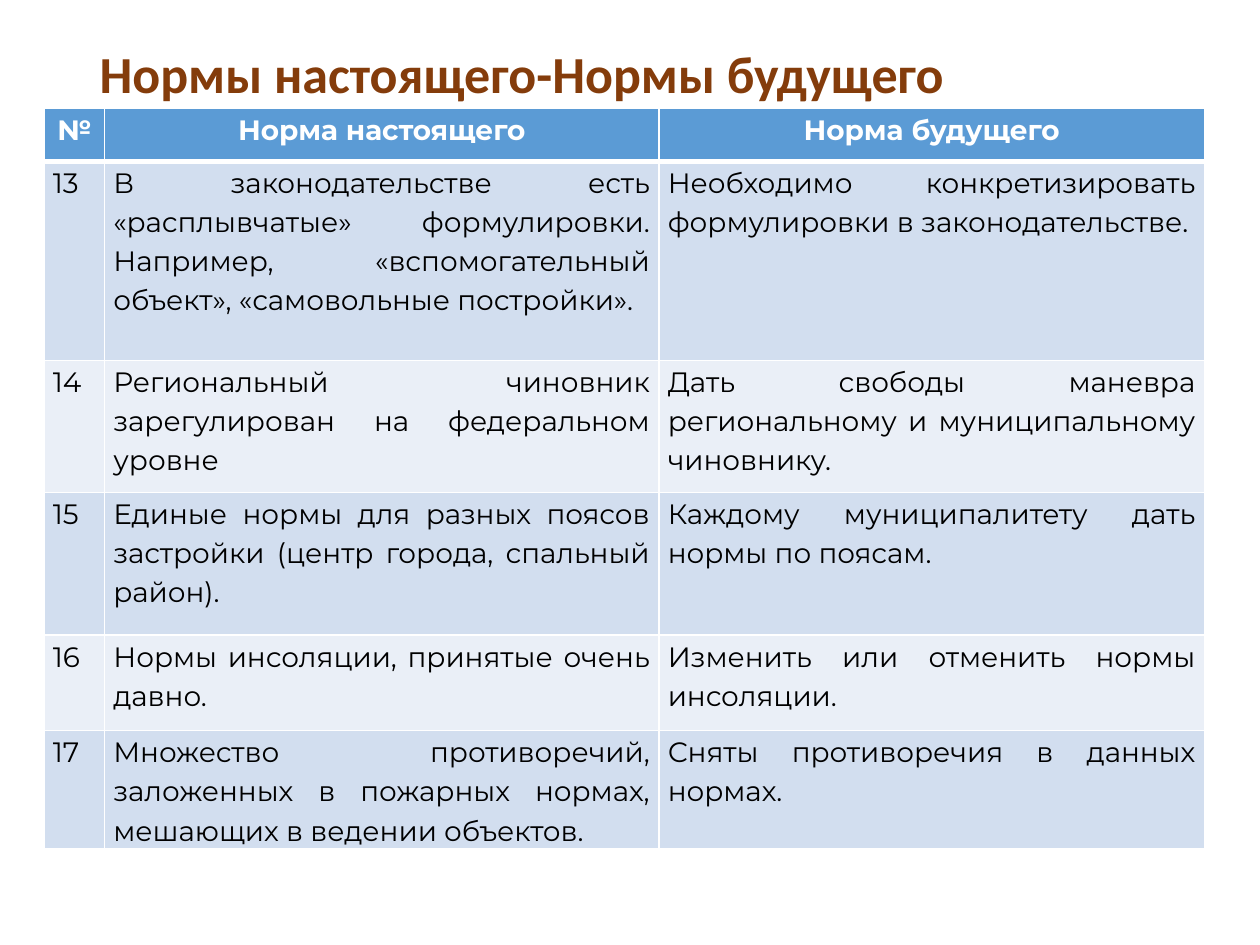
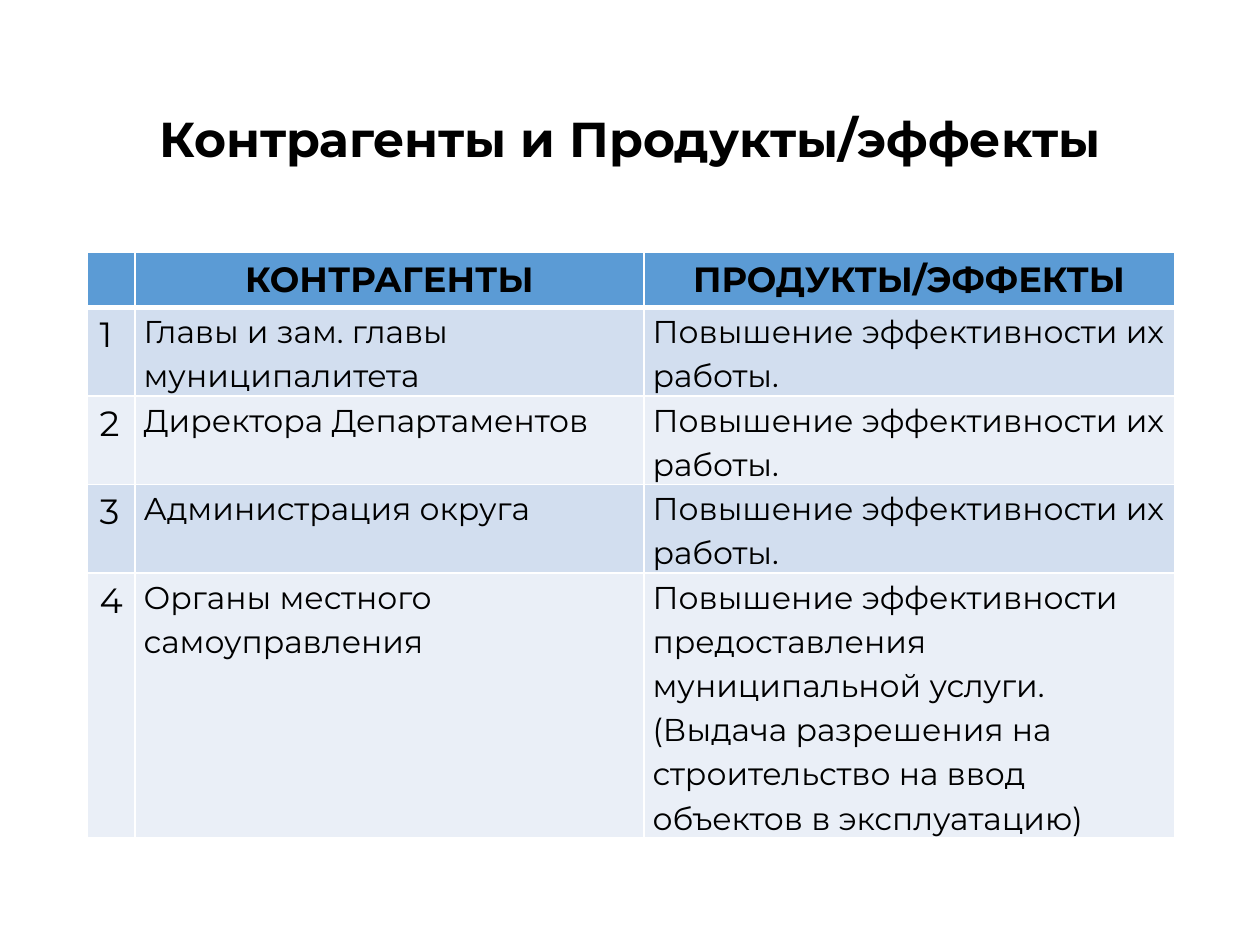
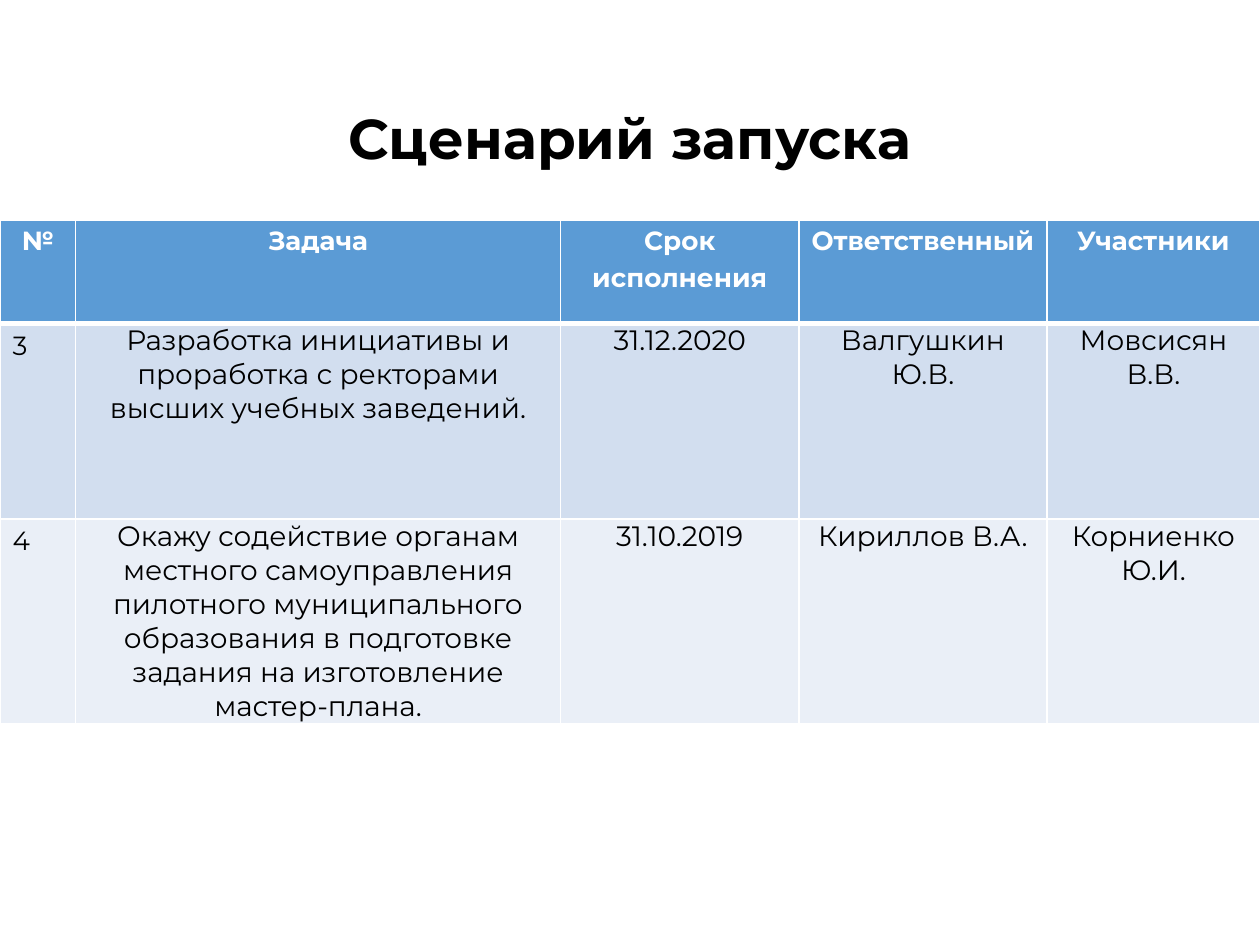
from dataclasses import dataclass
from lxml.etree import SubElement
from pptx import Presentation
from pptx.dml.color import RGBColor
from pptx.enum.text import MSO_ANCHOR, MSO_AUTO_SIZE, PP_ALIGN
from pptx.oxml.ns import qn
from pptx.util import Inches, Pt

LEFT, MID, JUST = PP_ALIGN.LEFT, PP_ALIGN.CENTER, PP_ALIGN.JUSTIFY


@dataclass(frozen=True)
class Theme:
    font: str = "Montserrat"
    black: str = "000000"
    white: str = "FFFFFF"
    brown: str = "843C0B"
    head: str = "5B9BD5"
    bands: tuple = ("D2DEEF", "EAEFF7")
    thin: float = 1
    thick: float = 3
    tight: tuple = (0.07, 0)
    loose: tuple = (0.1, 0.05)


T = Theme()
EFFECT = "Повышение эффективности их работы."

# Each table has three cell formats: head row, number column, body.
SLIDES = [
    dict(
        title="Нормы настоящего-Нормы будущего",
        box=(0.69, 0.52, 8.62, 0.67),
        style=dict(size=29.7, font="Calibri", color=T.brown, align=LEFT),
        lift=0.5,
        at=(0.35, 0.86),
        cols=(0.48, 4.4, 4.33),
        heights=(0.42, 1.58, 1.05, 1.13, 0.76, 0.94),
        head=dict(size=16, color=T.white, space=1.15),
        number=dict(size=16, space=1.15),
        body=dict(size=16, space=1.15, align=JUST),
        rows=[
            ("№", "Норма настоящего", "Норма будущего"),
            ("13", "В законодательстве есть «расплывчатые» формулировки. "
             "Например, «вспомогательный объект», «самовольные постройки».",
             "Необходимо конкретизировать формулировки в законодательстве."),
            ("14", "Региональный чиновник зарегулирован на федеральном уровне",
             "Дать свободы маневра региональному и муниципальному чиновнику."),
            ("15", "Единые нормы для разных поясов застройки "
             "(центр города, спальный район).",
             "Каждому муниципалитету дать нормы по поясам."),
            ("16", "Нормы инсоляции, принятые очень давно.",
             "Изменить или отменить нормы инсоляции."),
            ("17", "Множество противоречий, заложенных в пожарных нормах, "
             "мешающих в ведении объектов.",
             "Сняты противоречия в данных нормах."),
        ],
    ),
    dict(
        title="Контрагенты и Продукты/эффекты",
        box=(0.69, 0.4, 8.62, 1.45),
        style=dict(size=28),
        at=(0.69, 2),
        cols=(0.38, 4.04, 4.21),
        heights=(0.43, 0.7, 0.7, 0.7, 2.1),
        head=dict(size=20, inset=T.loose),
        number=dict(size=20, inset=T.loose),
        body=dict(size=18, space=1.15),
        rows=[
            ("", "КОНТРАГЕНТЫ", "ПРОДУКТЫ/ЭФФЕКТЫ"),
            ("1", "Главы и зам. главы муниципалитета", EFFECT),
            ("2", "Директора Департаментов", EFFECT),
            ("3", "Администрация округа", EFFECT),
            ("4", "Органы местного самоуправления",
             "Повышение эффективности предоставления муниципальной услуги. "
             "(Выдача разрешения на строительство на ввод объектов "
             "в эксплуатацию)"),
        ],
    ),
    dict(
        title="Сценарий запуска",
        box=(0.69, 0.4, 8.62, 1.45),
        style=dict(size=32),
        at=(0, 1.75),
        cols=(0.6, 3.85, 1.89, 1.97, 1.69),
        heights=(0.82, 1.55, 1.6),
        head=dict(size=15, color=T.white, space=1.15),
        number=dict(size=15, inset=T.loose),
        body=dict(size=16, align=MID),
        rows=[
            ("№", "Задача", "Срок исполнения", "Ответственный", "Участники"),
            ("3", "Разработка инициативы и проработка с ректорами "
             "высших учебных заведений.",
             "31.12.2020", "Валгушкин Ю.В.", "Мовсисян В.В."),
            ("4", "Окажу содействие органам местного самоуправления пилотного "
             "муниципального образования в подготовке задания "
             "на изготовление мастер-плана.",
             "31.10.2019", "Кириллов В.А.", "Корниенко Ю.И."),
        ],
    ),
]


def write(frame, text, size=16, font=T.font, color=T.black, bold=False,
          align=LEFT, space=1.0):
    para = frame.paragraphs[0]
    para.alignment, para.line_spacing = align, space
    if not text:
        return
    run = para.add_run()
    run.text = text
    run.font.name, run.font.size, run.font.bold = font, Pt(size), bold
    run.font.color.rgb = RGBColor.from_string(color)


def edge(cell, side, width):
    """Draw one white border; call before the cell is filled."""
    line = SubElement(cell._tc.get_or_add_tcPr(), qn(f"a:ln{side}"),
                      w=str(Pt(width)))
    fill = SubElement(line, qn("a:solidFill"))
    SubElement(fill, qn("a:srgbClr"), val=T.white)


def paint(cell, row):
    for side in "LRTB":
        rule = (row, side) in ((0, "B"), (1, "T"))
        edge(cell, side, T.thick if rule else T.thin)
    cell.fill.solid()
    color = T.bands[(row - 1) % 2] if row else T.head
    cell.fill.fore_color.rgb = RGBColor.from_string(color)


def fill(cell, text, inset=T.tight, **form):
    cell.margin_left = cell.margin_right = Inches(inset[0])
    cell.margin_top = cell.margin_bottom = Inches(inset[1])
    write(cell.text_frame, text, **form)


def add_title(slide, page):
    title = slide.shapes.title
    title.left, title.top, title.width, title.height = map(Inches, page["box"])
    frame = title.text_frame
    frame.auto_size, frame.word_wrap = MSO_AUTO_SIZE.NONE, True
    frame.vertical_anchor = MSO_ANCHOR.MIDDLE
    if "lift" in page:
        frame.margin_top, frame.margin_bottom = 0, Inches(page["lift"])
    write(frame, page["title"],
          **{"bold": True, "align": MID, "space": 0.9, **page["style"]})


def add_grid(slide, page):
    rows, cols, heights = page["rows"], page["cols"], page["heights"]
    sizes = (*page["at"], sum(cols), sum(heights))
    grid = slide.shapes.add_table(len(rows), len(cols),
                                  *map(Inches, sizes)).table
    for col, width in zip(grid.columns, cols):
        col.width = Inches(width)
    for row, height in zip(grid.rows, heights):
        row.height = Inches(height)
    head = {"bold": True, "align": MID, **page["head"]}
    for r, texts in enumerate(rows):
        for c, text in enumerate(texts):
            cell = grid.cell(r, c)
            paint(cell, r)
            form = head if r == 0 else page["body" if c else "number"]
            fill(cell, text, **form)


def main():
    deck = Presentation()
    deck.slide_width, deck.slide_height = Inches(10), Inches(7.5)
    for page in SLIDES:
        slide = deck.slides.add_slide(deck.slide_layouts.get_by_name("Title Only"))
        add_title(slide, page)
        add_grid(slide, page)
    deck.save("out.pptx")


if __name__ == "__main__":
    main()
